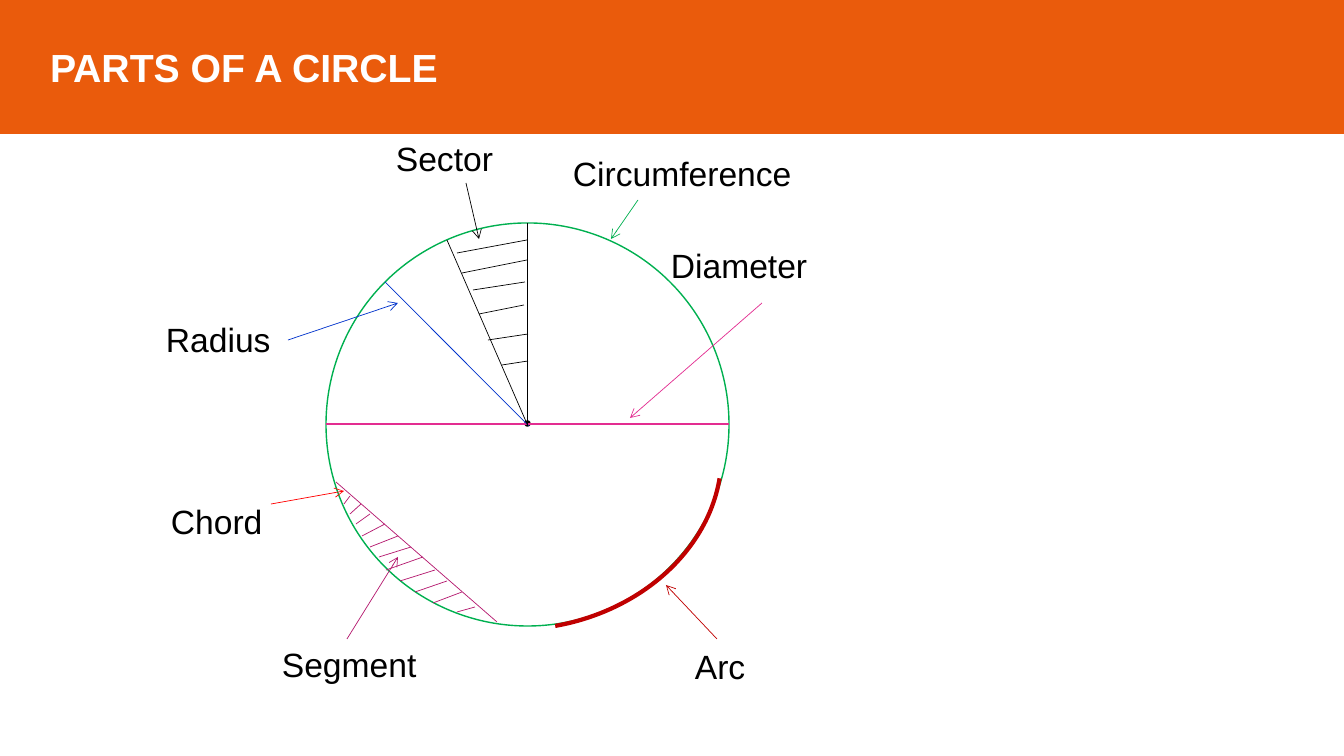
"""Build a slide that names the parts of a circle."""
import pptx
import pptx.dml.color
import pptx.enum.shapes
import pptx.enum.text
import pptx.oxml
import pptx.util

PX = 9144000 / 1008
THEME = {
    "font": "Arial", "title": 28, "label": 24,
    "thin": 0.5, "line": 1, "thick": 3,
    "orange": "EA5B0C", "white": "FFFFFF", "black": "000000",
    "green": "00B050", "dark": "C00000", "pink": "E32D91",
    "blue": "0033CC", "plum": "B4186E", "red": "FF0000",
}
SHAPE = pptx.enum.shapes.MSO_SHAPE
RGB = pptx.dml.color.RGBColor.from_string


def style(item, form):
    """Set each attribute named in form on item."""
    for name, value in form.items():
        setattr(item, name, value)


def draw(shapes, ends, color, width="thin", arrow=False):
    """Add a straight line, with an arrowhead at its end if asked."""
    kind = pptx.enum.shapes.MSO_CONNECTOR.STRAIGHT
    line = shapes.add_connector(kind, *[round(n * PX) for n in ends])
    line.line.color.rgb = RGB(THEME[color])
    line.line.width = pptx.util.Pt(THEME[width])
    props = line._element.spPr
    if arrow:
        pptx.oxml.ns.qn("a:tailEnd")
        head = props.ln.makeelement(pptx.oxml.ns.qn("a:tailEnd"), {"type": "arrow"})
        props.ln.append(head)
    props.append(props.makeelement(pptx.oxml.ns.qn("a:effectLst"), {}))


deck = pptx.Presentation()
style(deck, {"slide_width": round(1344 * PX), "slide_height": round(756 * PX)})
slide = deck.slides.add_slide(deck.slide_layouts[5])
shapes = slide.shapes

title = shapes.title
style(title, {"left": 0, "top": 0, "width": deck.slide_width, "height": round(133 * PX)})
title.fill.solid()
title.fill.fore_color.rgb = RGB(THEME["orange"])
title.line.color.rgb = RGB(THEME["orange"])
title.line.width = pptx.util.Pt(THEME["line"])
frame = title.text_frame
frame.text = "PARTS OF A CIRCLE"
style(frame, {
    "margin_left": round(50 * PX), "word_wrap": True,
    "auto_size": pptx.enum.text.MSO_AUTO_SIZE.NONE,
    "vertical_anchor": pptx.enum.text.MSO_ANCHOR.MIDDLE,
})
frame.paragraphs[0].alignment = pptx.enum.text.PP_ALIGN.LEFT
font = frame.paragraphs[0].runs[0].font
style(font, {"name": THEME["font"], "size": pptx.util.Pt(THEME["title"]), "bold": True})
font.color.rgb = RGB(THEME["white"])

rounds = [
    (SHAPE.OVAL, (326, 223, 403, 403), "white", "green", "line"),
    (SHAPE.ARC, (357, 264, 332, 398), None, "dark", "thick"),
    (SHAPE.OVAL, (525, 421, 5, 5), "black", "black", "line"),
]
for kind, box, fill, color, width in rounds:
    shape = shapes.add_shape(kind, *[round(n * PX) for n in box])
    shape.shadow.inherit = False
    if fill:
        shape.fill.solid()
        shape.fill.fore_color.rgb = RGB(THEME[fill])
    else:
        shape.fill.background()
    shape.line.color.rgb = RGB(THEME[color])
    shape.line.width = pptx.util.Pt(THEME[width])
    if kind == SHAPE.ARC:
        shape.rotation = 82.6
        shape.adjustments[0] = 169.12
        shape.adjustments[1] = 213.73

draw(shapes, (326, 424, 729, 424), "pink", "line")
draw(shapes, (529, 426, 385, 282), "blue")
draw(shapes, (336, 482, 497, 622), "plum")

hatches = {
    "plum": [
        (344, 504, 350, 496), (350, 514, 361, 504), (356, 524, 370, 514),
        (362, 536, 385, 524), (370, 547, 398, 536), (379, 557, 411, 547),
        (386, 570, 423, 557), (400, 581, 435, 570), (415, 592, 447, 581),
        (433, 603, 462, 592), (457, 612, 475, 607),
    ],
    "black": [
        (528, 426, 447, 240), (527, 426, 527, 223), (457, 253, 527, 240),
        (462, 273, 527, 260), (473, 290, 525, 282), (479, 314, 524, 305),
        (488, 340, 528, 334), (502, 365, 528, 361),
    ],
}
for color, lines in hatches.items():
    group = shapes.add_group_shape()
    for ends in lines:
        draw(group.shapes, ends, color)

labels = [
    ("Circumference", (563, 148, 264), (638, 200, 611, 239), "green"),
    ("Diameter", (661, 240, 264), (762, 303, 630, 418), "pink"),
    ("Arc", (685, 641, 107), (717, 639, 666, 585), "dark"),
    ("Radius", (156, 314, 133), (288, 340, 398, 303), "blue"),
    ("Chord", (161, 496, 132), (271, 504, 344, 491), "red"),
    ("Segment", (272, 639, 174), (347, 639, 398, 557), "plum"),
    ("Sector", (386, 133, 264), (466, 183, 479, 239), "black"),
]
for text, (left, top, width), ends, color in labels:
    draw(shapes, ends, color, arrow=True)
    label = shapes.add_textbox(*[round(n * PX) for n in (left, top, width, 50)])
    label.text_frame.word_wrap = True
    label.text_frame.text = text
    font = label.text_frame.paragraphs[0].runs[0].font
    style(font, {"name": THEME["font"], "size": pptx.util.Pt(THEME["label"])})
    font.color.rgb = RGB(THEME["black"])

deck.save("out.pptx")
